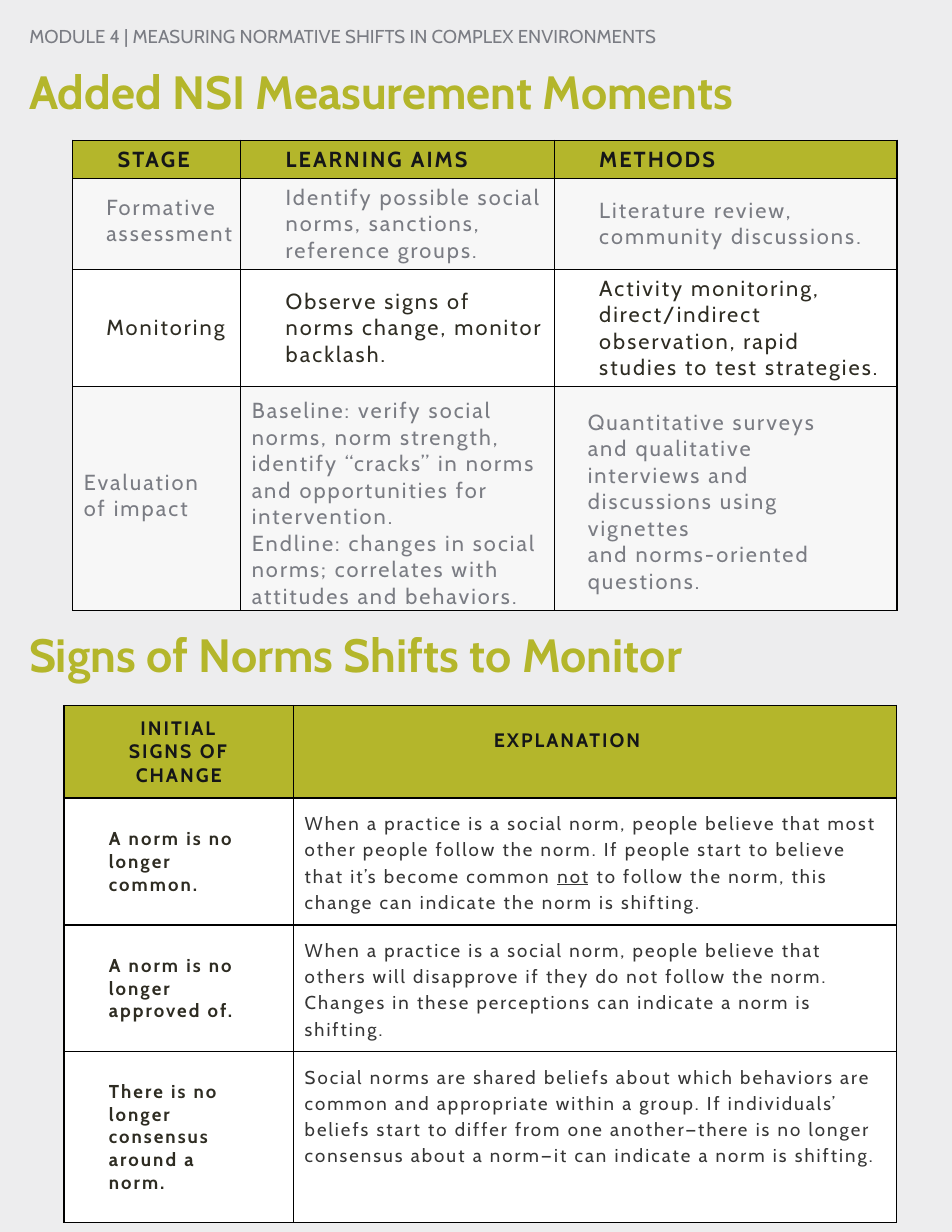
from lxml.etree import SubElement
from pptx import Presentation
from pptx.dml.color import RGBColor
from pptx.enum.text import MSO_ANCHOR as Anchor, MSO_AUTO_SIZE as AutoSize, PP_ALIGN as Align
from pptx.oxml import parse_xml
from pptx.oxml.ns import nsdecls, qn
from pptx.util import Cm, Pt

COLORS = {
    "background": "EDEDEE", "olive": "B4B62B", "heading": "151618", "gray": "7A7C83",
    "dark": "2E2C22", "body": "363636", "pale": "F7F7F7", "white": "FFFFFF", "border": "000000",
}

# Cell margins in cm: left, top, right, bottom
WIDE = (1.02, 0.13, 0.25, 0.13)
SIGN = (1.02, 0.64, 1.02, 0.64)
EVEN = (0.25, 0.25, 0.25, 0.25)


class SlideBuilder:
    font_name = "Cabin"
    letter_spacing = 130

    def __init__(self, slide):
        self.slide = slide
        slide.background.fill.solid()
        slide.background.fill.fore_color.rgb = self.color("background")

    def color(self, name):
        return RGBColor.from_string(COLORS[name])

    def place(self, shape, left, top, width, height):
        shape.left, shape.top = Cm(left), Cm(top)
        shape.width, shape.height = Cm(width), Cm(height)

    def add_run(self, paragraph, text, size, color, bold=False, underline=False, spacing=0):
        run = paragraph.add_run()
        run.text = text
        font = run.font
        font.name, font.size, font.bold = self.font_name, Pt(size), bold
        font.color.rgb = self.color(color)
        if underline:
            font.underline = True
        if spacing:
            run._r.get_or_add_rPr().set("spc", str(spacing))

    def label(self, placeholder, text, *box):
        self.place(placeholder, *box)
        frame = placeholder.text_frame
        frame.auto_size = AutoSize.NONE
        paragraph = frame.paragraphs[0]
        properties = paragraph._p.get_or_add_pPr()
        properties.set("marL", "0")
        properties.set("indent", "0")
        SubElement(properties, qn("a:buNone"))
        paragraph.space_before = Pt(0)
        self.add_run(paragraph, text, 12, "gray")

    def heading(self, shape, text, *box):
        self.place(shape, *box)
        frame = shape.text_frame
        frame.word_wrap = True
        frame.auto_size = AutoSize.NONE
        frame.vertical_anchor = Anchor.TOP
        paragraph = frame.paragraphs[0]
        paragraph.alignment = Align.LEFT
        paragraph.line_spacing = 0.9
        self.add_run(paragraph, text, 30, "olive", bold=True)

    def text_box(self):
        return self.slide.shapes.add_textbox(0, 0, 0, 0)

    def table(self, left, top, widths, heights):
        frame = self.slide.shapes.add_table(
            len(heights), len(widths), Cm(left), Cm(top), Cm(sum(widths)), Cm(sum(heights)))
        table = frame.table
        table.first_row = table.horz_banding = False
        for column, width in zip(table.columns, widths):
            column.width = Cm(width)
        for row, height in zip(table.rows, heights):
            row.height = Cm(height)
        return table

    def cell(self, cell, paragraphs, margins, fill, size, color, bold=False,
             anchor=Anchor.MIDDLE, align=Align.LEFT, line_spacing=None):
        """Each paragraph is a list of runs; "_" marks an underlined run, "\\n" a line break."""
        cell.margin_left, cell.margin_top, cell.margin_right, cell.margin_bottom = map(Cm, margins)
        cell.vertical_anchor = anchor
        cell.fill.solid()
        cell.fill.fore_color.rgb = self.color(fill)
        self.borders(cell)
        frame = cell.text_frame
        for index, runs in enumerate(paragraphs):
            paragraph = frame.add_paragraph() if index else frame.paragraphs[0]
            paragraph.alignment = align
            paragraph.line_spacing = line_spacing
            for text in runs:
                if text == "\n":
                    paragraph.add_line_break()
                else:
                    self.add_run(paragraph, text.strip("_"), size, color, bold,
                                 text.startswith("_"), self.letter_spacing)

    def borders(self, cell):
        properties = cell._tc.get_or_add_tcPr()
        for position, side in enumerate("LRTB"):
            properties.insert(position, parse_xml(
                f'<a:ln{side} {nsdecls("a")} w="12700"><a:solidFill>'
                f'<a:srgbClr val="{COLORS["border"]}"/></a:solidFill></a:ln{side}>'))


def add_stages(builder):
    table = builder.table(1.65, 3.18, [3.81, 7.11, 7.77], [0.84, 2.03, 2.62, 5.08])
    for column, text in enumerate(["STAGE", "LEARNING AIMS", "METHODS"]):
        builder.cell(table.cell(0, column), [[text]], WIDE, "olive", 14, "heading", bold=True)

    rows = [
        ("pale", "gray", [
            ("Formative assessment", (0.76, 0, 0, 0.13)),
            ("Identify possible social norms, sanctions, reference groups.", WIDE),
            ("Literature review, community discussions.", WIDE)]),
        ("white", "dark", [
            ("Monitoring", (0.76, 0.13, 0.25, 0.13)),
            ("Observe signs of norms change, monitor backlash.", WIDE),
            ("Activity monitoring, direct/indirect observation, rapid studies "
             "to test strategies.", WIDE)]),
    ]
    for row, (fill, color, cells) in enumerate(rows, 1):
        for column, (text, margins) in enumerate(cells):
            builder.cell(table.cell(row, column), [[text]], margins, fill, 14, color)

    evaluation = [
        ([["Evaluation of impact"]], (0.25, 0, 0.25, 0.13), Anchor.MIDDLE),
        ([["Baseline: verify social norms, norm strength, identify “cracks” in norms "
           "and opportunities for intervention."],
          ["Endline: changes in social norms; correlates with attitudes and behaviors."]],
         (0.25, 0.25, 0.25, 0), Anchor.TOP),
        ([["Quantitative surveys and qualitative interviews and discussions using vignettes",
           "\n", "and norms-oriented questions."]], (0.76, 0.51, 0.76, 0), Anchor.TOP),
    ]
    for column, (paragraphs, margins, anchor) in enumerate(evaluation):
        builder.cell(table.cell(3, column), paragraphs, margins, "pale", 14, "gray", anchor=anchor)


def add_signs(builder):
    table = builder.table(1.45, 16, [5.21, 13.67], [1.93, 2.67, 2.67, 3.63])
    headers = [("INITIAL SIGNS OF CHANGE", (1.02, 0.25, 1.02, 0.25)),
               ("EXPLANATION", (0, 0.51, 1.27, 1.02))]
    for column, (text, margins) in enumerate(headers):
        builder.cell(table.cell(0, column), [[text]], margins, "olive", 12.5, "heading",
                     bold=True, align=Align.CENTER)

    signs = [
        ("A norm is no longer common.", [
            "When a practice is a social norm, people believe that most other people follow "
            "the norm. If people start to believe that it’s become common ", "_not_",
            " to follow the norm, this change can indicate the norm is shifting."]),
        ("A norm is no longer approved of.", [
            "When a practice is a social norm, people believe that others will disapprove if "
            "they do not follow the norm. Changes in these perceptions can indicate a norm "
            "is shifting."]),
        ("There is no longer consensus around a norm.", [
            "Social norms are shared beliefs about which behaviors are common and appropriate "
            "within a group. If individuals’ beliefs start to differ from one another—there is "
            "no longer consensus about a norm—it can indicate a norm is shifting."]),
    ]
    for row, (sign, explanation) in enumerate(signs, 1):
        builder.cell(table.cell(row, 0), [[sign]], SIGN, "white", 12, "dark", bold=True)
        builder.cell(table.cell(row, 1), [explanation], EVEN, "white", 12, "body",
                     anchor=Anchor.TOP, line_spacing=1.15)


def main():
    presentation = Presentation()
    presentation.slide_width, presentation.slide_height = Cm(21.59), Cm(27.94)
    slide = presentation.slides.add_slide(presentation.slide_layouts[1])
    builder = SlideBuilder(slide)

    # Module line and measurement stages
    builder.label(slide.placeholders[1],
                  "MODULE 4 | MEASURING NORMATIVE SHIFTS IN COMPLEX ENVIRONMENTS",
                  0.41, 0.43, 17.35, 1.19)
    builder.heading(slide.shapes.title, "Added NSI Measurement Moments", 0.41, 1.45, 18.69, 1.42)
    add_stages(builder)

    # Signs of norms shifts
    builder.heading(builder.text_box(), "Signs of Norms Shifts to Monitor",
                    0.41, 14.22, 16.94, 1.42)
    add_signs(builder)

    presentation.save("out.pptx")


if __name__ == "__main__":
    main()
